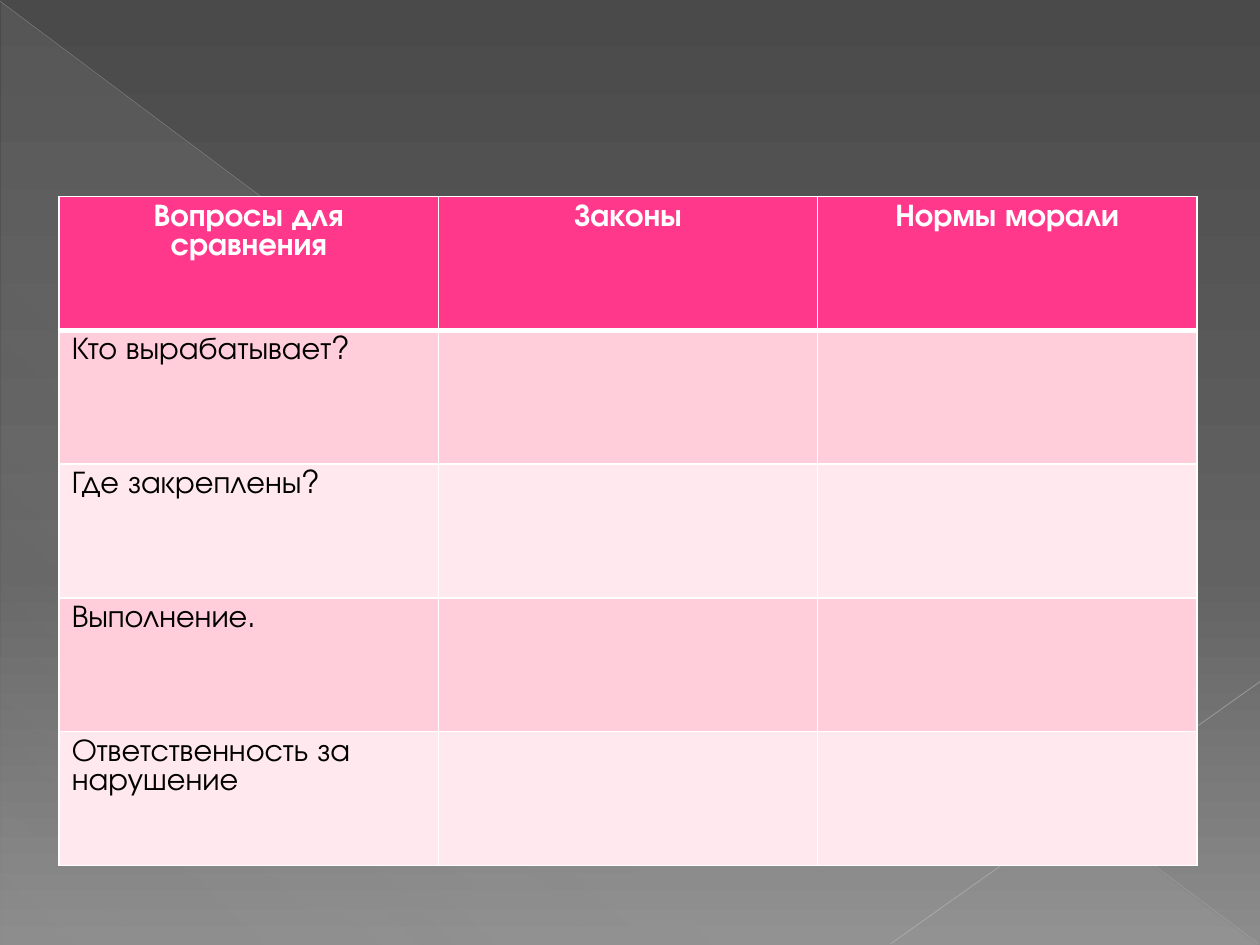
from pptx import Presentation
from pptx.dml.color import RGBColor
from pptx.enum.shapes import MSO_CONNECTOR, MSO_SHAPE
from pptx.enum.text import PP_ALIGN
from pptx.oxml.ns import qn
from pptx.util import Inches, Pt
from lxml import etree

TRIANGLE = MSO_SHAPE.RIGHT_TRIANGLE
STRAIGHT = MSO_CONNECTOR.STRAIGHT
CENTER, LEFT = PP_ALIGN.CENTER, PP_ALIGN.LEFT

FONT = "TeX Gyre Adventor"
COLORS = {
    "white": "FFFFFF", "black": "000000", "header": "FF388C",
    "band_dark": "FFCEDA", "band_light": "FFE8EE", "glow": "D2D2D2",
}

ROWS = [
    ["Вопросы для сравнения", "Законы", "Нормы морали"],
    ["Кто вырабатывает?", "", ""],
    ["Где закреплены?", "", ""],
    ["Выполнение.", "", ""],
    ["Ответственность за нарушение", "", ""],
]
TABLE_BOX = (0.47, 1.56, 9.03, 5.31)

# Gradient stops: position %, color, opacity %
BACKGROUND = [(0, "4A4A4A", 100), (60, "626262", 100), (100, "8C8C8C", 100)]
GLOW = [(0, COLORS["glow"], 10), (70, COLORS["glow"], 8), (100, COLORS["glow"], 1)]

# Diagonals: start x, y, end x, y, color, width, opacity %
DIAGONALS = [
    (0, 0.01, 9.99, 7.49, "BFBFBF", 0.39, 35),
    (10, 5.41, 7.07, 7.49, "C6C6C6", 0.47, 45),
]


def add_color(parent, color, opacity):
    node = etree.SubElement(parent, qn("a:srgbClr"), val=color)
    if opacity < 100:
        etree.SubElement(node, qn("a:alpha"), val=str(opacity * 1000))


def set_gradient(fill, owner, stops, angle):
    fill.gradient()
    fill.gradient_angle = 360 - angle  # the property counts counter-clockwise
    stop_list = next(owner.iter(qn("a:gsLst")))
    for old in list(stop_list):
        stop_list.remove(old)
    for position, color, opacity in stops:
        stop = etree.SubElement(stop_list, qn("a:gs"), pos=str(position * 1000))
        add_color(stop, color, opacity)


def add_diagonal(page, x1, y1, x2, y2, color, width, opacity):
    line = page.shapes.add_connector(STRAIGHT, *map(Inches, (x1, y1, x2, y2)))
    line.line.width = Pt(width)
    line.line.fill.solid()
    line.line.color.rgb = RGBColor.from_string(color)
    rgb = next(line._element.iter(qn("a:srgbClr")))
    etree.SubElement(rgb, qn("a:alpha"), val=str(opacity * 1000))
    etree.SubElement(line._element.spPr, qn("a:effectLst"))


def set_borders(cell, widths):
    properties = cell._tc.get_or_add_tcPr()
    for index, (side, width) in enumerate(widths.items()):
        border = etree.Element(qn(f"a:ln{side}"), w=str(Pt(width)))
        add_color(etree.SubElement(border, qn("a:solidFill")), COLORS["white"], 100)
        properties.insert(index, border)  # borders precede the fill


def format_cell(cell, text, row):
    is_header = row == 0
    band = "header" if is_header else "band_dark" if row % 2 else "band_light"
    cell.fill.solid()
    cell.fill.fore_color.rgb = RGBColor.from_string(COLORS[band])
    set_borders(cell, {"L": 1, "R": 1, "T": 3 if row == 1 else 1,
                       "B": 3 if is_header else 1})
    cell.text_frame.text = text
    para = cell.text_frame.paragraphs[0]
    para.alignment = CENTER if is_header else LEFT
    para.font.size = Pt(18)
    for span in para.runs:
        span.font.name = FONT
        span.font.size = Pt(18)
        span.font.bold = is_header
        color = COLORS["white" if is_header else "black"]
        span.font.color.rgb = RGBColor.from_string(color)


def main():
    deck = Presentation()
    deck.slide_width, deck.slide_height = Inches(10), Inches(7.5)
    page = deck.slides.add_slide(deck.slide_layouts[6])

    # Background with a faint triangle and diagonals
    set_gradient(page.background.fill, page._element, BACKGROUND, 90)
    triangle = page.shapes.add_shape(
        TRIANGLE, *map(Inches, (0.01, 0.02, 9.98, 7.48)))
    triangle.shadow.inherit = False
    triangle.line.fill.background()
    set_gradient(triangle.fill, triangle._element, GLOW, 133)
    for diagonal in DIAGONALS:
        add_diagonal(page, *diagonal)

    # Comparison table
    table = page.shapes.add_table(
        len(ROWS), len(ROWS[0]), *map(Inches, TABLE_BOX)).table
    for row, texts in enumerate(ROWS):
        for column, text in enumerate(texts):
            format_cell(table.cell(row, column), text, row)

    deck.save("out.pptx")


if __name__ == "__main__":
    main()
